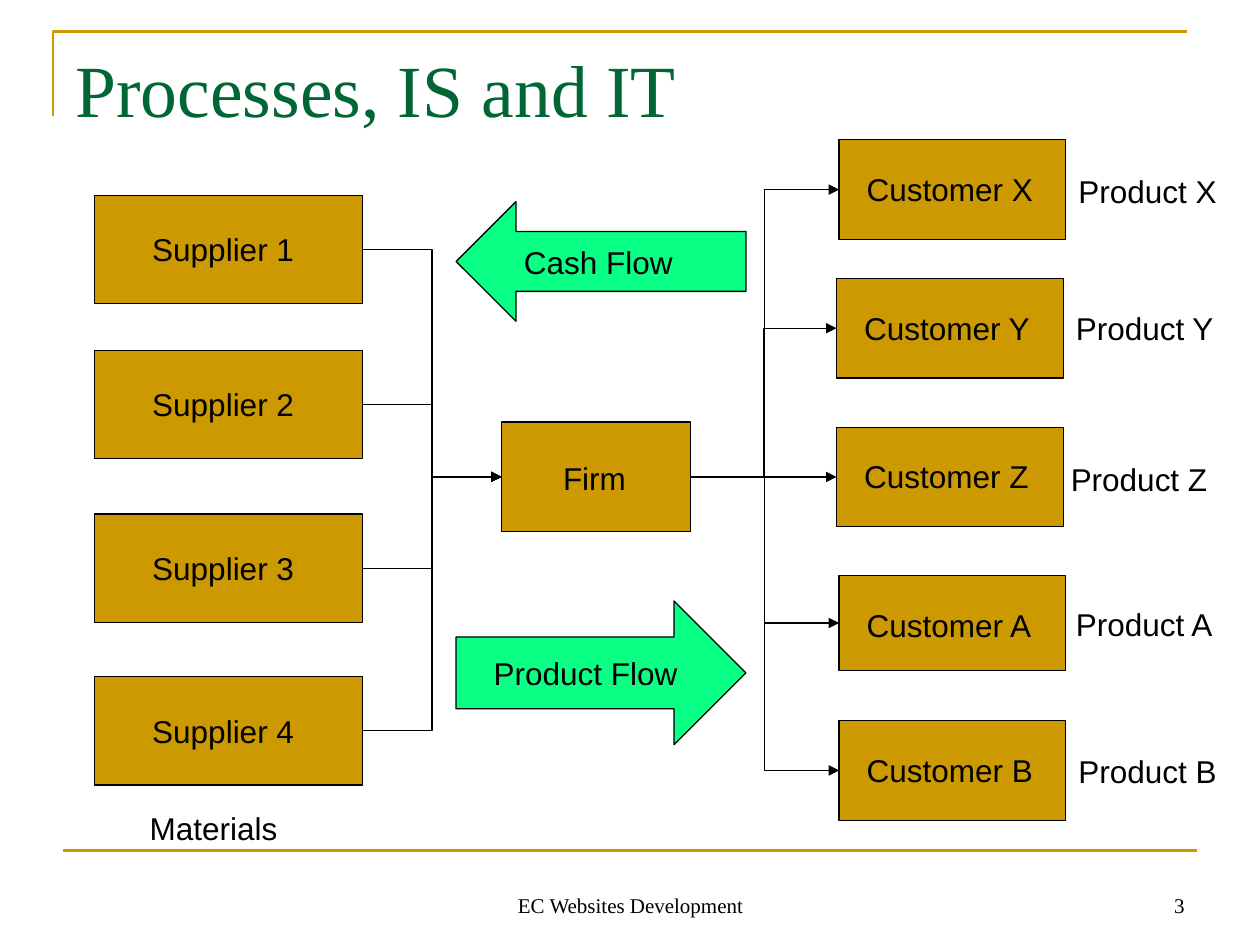
import dataclasses

import pptx
import pptx.dml.color
import pptx.enum.shapes
import pptx.enum.text
import pptx.oxml
import pptx.oxml.ns
import pptx.util

Inches = pptx.util.Inches
RGBColor = pptx.dml.color.RGBColor
Shape = pptx.enum.shapes.MSO_SHAPE
Connector = pptx.enum.shapes.MSO_CONNECTOR
Align = pptx.enum.text.PP_ALIGN
Anchor = pptx.enum.text.MSO_ANCHOR

GOLD = RGBColor(0xCC, 0x99, 0x00)
GREEN = RGBColor(0x0A, 0xFF, 0x85)
TITLE_GREEN = RGBColor(0x00, 0x66, 0x33)
BLACK = RGBColor(0, 0, 0)

SANS = {"name": "Arial", "size": pptx.util.Pt(18)}
SERIF = {"name": "Times New Roman", "size": pptx.util.Pt(12)}
TITLE = {"name": "Times New Roman", "size": pptx.util.Pt(42)}
RIGHT_SIDE, LEFT_SIDE = 3, 1


@dataclasses.dataclass
class Label:
    text: str
    left: float
    top: float
    width: float
    height: float = 0.4


@dataclasses.dataclass
class Node:
    left: float
    top: float
    width: float
    height: float
    label: Label  # placed relative to the node's corner


def supplier(number: int, top: float) -> Node:
    return Node(0.75, top, 2.13, 0.86, Label(f"Supplier {number}", 0.36, 0.23, 1.41))


def customer(letter: str, left: float, top: float, height: float = 0.79) -> Node:
    return Node(left, top, 1.8, height, Label(f"Customer {letter}", 0.12, 0.19, 1.57))


FIRM = Node(3.98, 3.35, 1.5, 0.87, Label("Firm", 0.39, 0.24, 0.75))
SUPPLIERS = [supplier(i, top) for i, top in enumerate((1.55, 2.78, 4.08, 5.37), 1)]
CUSTOMERS = [
    customer("X", 6.66, 1.11),
    customer("Y", 6.64, 2.21),
    customer("Z", 6.64, 3.39),
    customer("A", 6.66, 4.57, 0.75),
    customer("B", 6.66, 5.72),
]
CAPTIONS = [
    Label("Product X", 8.46, 1.32, 1.34),
    Label("Product Y", 8.44, 2.4, 1.34),
    Label("Product Z", 8.4, 3.6, 1.34),
    Label("Product A", 8.44, 4.75, 1.34),
    Label("Product B", 8.46, 5.92, 1.34),
    Label("Materials", 1.09, 6.37, 1.27),
]
# Top, height, rotation and caption of each block arrow
FLOWS = [
    (4.77, 1.14, 0, Label("Product Flow", 3.82, 5.14, 1.8)),
    (1.6, 0.95, 180, Label("Cash Flow", 4.06, 1.88, 1.4)),
]


def write(frame, text: str, font: dict, color=BLACK, align=Align.LEFT, anchor=Anchor.TOP) -> None:
    frame.word_wrap = True
    frame.vertical_anchor = anchor
    para = frame.paragraphs[0]
    para.alignment = align
    span = para.add_run()
    span.text = text
    for key, value in font.items():
        setattr(span.font, key, value)
    span.font.color.rgb = color


def add_label(shapes, label: Label, font: dict = SANS, **layout) -> None:
    box = shapes.add_textbox(*map(Inches, (label.left, label.top, label.width, label.height)))
    write(box.text_frame, label.text, font, **layout)


def set_line(shape, color: RGBColor, width: float) -> None:
    shape.line.color.rgb = color
    shape.line.width = pptx.util.Pt(width)


def add_block(shapes, kind, left: float, top: float, width: float, height: float, fill: RGBColor):
    block = shapes.add_shape(kind, *map(Inches, (left, top, width, height)))
    block.shadow.inherit = False
    block.fill.solid()
    block.fill.fore_color.rgb = fill
    set_line(block, BLACK, 0.75)
    return block


def add_node(page, node: Node):
    group = page.shapes.add_group_shape()
    box = add_block(group.shapes, Shape.RECTANGLE, node.left, node.top, node.width, node.height, GOLD)
    label = dataclasses.replace(
        node.label, left=node.left + node.label.left, top=node.top + node.label.top)
    add_label(group.shapes, label)
    return box


def add_line(page, kind, points=(0, 0, 0, 0), color=BLACK, width=0.75):
    line = page.shapes.add_connector(kind, *map(Inches, points))
    set_line(line, color, width)
    line._element.spPr.append(pptx.oxml.parse_xml(
        f'<a:effectLst {pptx.oxml.ns.nsdecls("a")}/>'))
    return line


def link(page, source, target) -> None:
    line = add_line(page, Connector.ELBOW)
    line.begin_connect(source, RIGHT_SIDE)
    line.end_connect(target, LEFT_SIDE)
    line.line._get_or_add_ln().append(pptx.oxml.parse_xml(
        f'<a:tailEnd {pptx.oxml.ns.nsdecls("a")} type="triangle"/>'))


def add_frame(page) -> None:
    builder = page.shapes.build_freeform(Inches(0.42), Inches(0.92))
    builder.add_line_segments(
        [(Inches(0.42), Inches(0.25)), (Inches(9.42), Inches(0.25))], close=False)
    corner = builder.convert_to_shape()
    corner.shadow.inherit = False
    corner.fill.background()
    set_line(corner, GOLD, 1.5)
    add_line(page, Connector.STRAIGHT, (0.5, 6.75, 9.5, 6.75), GOLD, 1.5)


def main() -> None:
    deck = pptx.Presentation()
    deck.slide_width, deck.slide_height = Inches(10), Inches(7.5)
    page = deck.slides.add_slide(deck.slide_layouts[5])

    # Title, frame and footer
    add_frame(page)
    title = page.shapes.title
    title.left, title.top, title.width, title.height = map(Inches, (0.5, 0.3, 9, 1.25))
    write(title.text_frame, "Processes, IS and IT", TITLE, TITLE_GREEN)
    add_label(page.shapes, Label("EC Websites Development", 3.42, 6.83, 3.17, 0.5), SERIF,
              align=Align.CENTER, anchor=Anchor.BOTTOM)
    add_label(page.shapes, Label("3", 7.17, 6.83, 2.33, 0.5), SERIF,
              align=Align.RIGHT, anchor=Anchor.BOTTOM)

    # Suppliers, firm and customers
    firm = add_node(page, FIRM)
    customers = [add_node(page, node) for node in CUSTOMERS]
    suppliers = [add_node(page, node) for node in SUPPLIERS]
    for box in suppliers:
        link(page, box, firm)
    for box in customers:
        link(page, firm, box)

    # Captions and flow arrows
    for caption in CAPTIONS:
        add_label(page.shapes, caption)
    for top, height, rotation, caption in FLOWS:
        arrow = add_block(page.shapes, Shape.RIGHT_ARROW, 3.62, top, 2.3, height, GREEN)
        arrow.rotation = rotation
        add_label(page.shapes, caption)

    deck.save("out.pptx")


if __name__ == "__main__":
    main()
